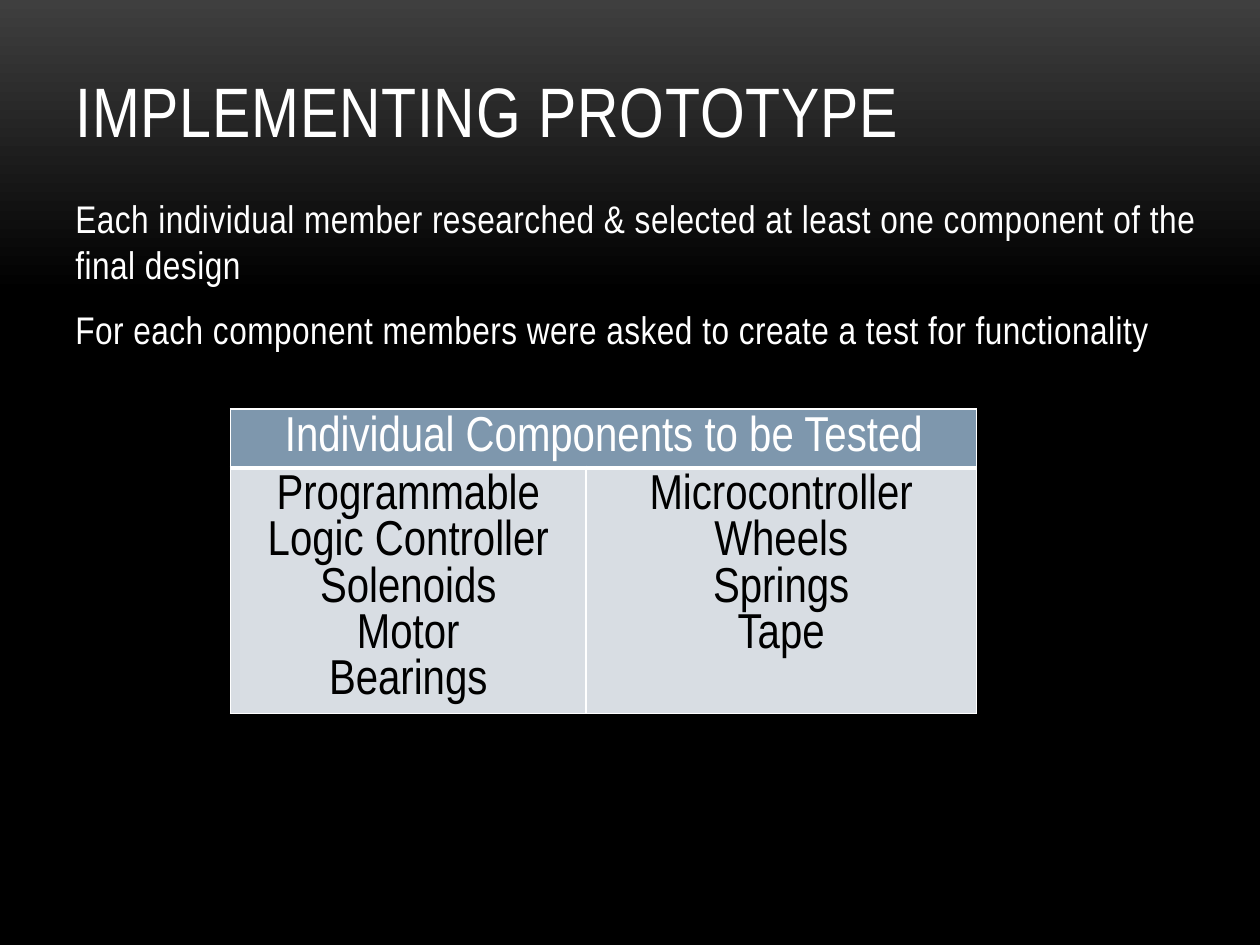
from copy import deepcopy
from dataclasses import dataclass

from pptx import Presentation
from pptx.dml.color import RGBColor
from pptx.enum.text import MSO_ANCHOR as Anchor, PP_ALIGN as Align
from pptx.oxml import parse_xml
from pptx.oxml.ns import nsdecls
from pptx.util import Inches, Pt

WIDTH, HEIGHT = Inches(10), Inches(7.5)
FONT = "Arial Narrow"
LINE_PITCH = 26.3
COLORS = {
    "glow": "3F3F3F",
    "black": "000000",
    "white": "FFFFFF",
    "header": "7E97AD",
    "body": "D8DDE3",
}


@dataclass(frozen=True)
class Box:
    """A place given as shares of the slide's width and height."""
    left: float
    top: float
    width: float
    height: float

    def lengths(self) -> tuple:
        return (int(self.left * WIDTH), int(self.top * HEIGHT),
                int(self.width * WIDTH), int(self.height * HEIGHT))


@dataclass(frozen=True)
class Style:
    size: float
    color: str = "white"
    tracking: float = 0
    align: Align = Align.LEFT
    pitch: float | None = LINE_PITCH
    before: float = 0
    after: float = 0


@dataclass(frozen=True)
class Cell:
    row: int
    column: int
    lines: tuple
    fill: str
    color: str
    bottom: float = 1


TITLE = Style(40, tracking=0.5, pitch=None)
BODY = Style(22, tracking=0.3, before=4.8, after=6)
COLUMN_SHARES = (0.282, 0.31)
ROW_SHARES = (0.06, 0.26)
CELLS = (
    Cell(0, 0, ("Individual Components to be Tested",), "header", "white", 3),
    Cell(1, 0, ("Programmable Logic Controller", "Solenoids", "Motor", "Bearings"),
         "body", "black"),
    Cell(1, 1, ("Microcontroller", "Wheels", "Springs", "Tape"), "body", "black"),
)


def rgb(name: str) -> RGBColor:
    return RGBColor.from_string(COLORS[name])


def write(text_frame, lines: tuple, style: Style) -> None:
    text_frame.text = "\n".join(lines)
    for index, paragraph in enumerate(text_frame.paragraphs):
        paragraph.alignment = style.align
        paragraph.space_before = Pt(style.before if index else 0)
        paragraph.space_after = Pt(style.after)
        if style.pitch:
            paragraph.line_spacing = Pt(style.pitch)
        for run in paragraph.runs:
            run.font.name = FONT
            run.font.size = Pt(style.size)
            run.font.bold = False
            run.font.color.rgb = rgb(style.color)
            if style.tracking:
                run.font._element.set("spc", str(int(style.tracking * 100)))


def add_text(slide, box: Box, lines: tuple, style: Style, anchor: Anchor) -> None:
    text_frame = slide.shapes.add_textbox(*box.lengths()).text_frame
    text_frame.word_wrap = True
    text_frame.vertical_anchor = anchor
    write(text_frame, lines, style)


def set_borders(cell, bottom: float) -> None:
    properties = cell._tc.get_or_add_tcPr()
    sides = {"lnL": 1, "lnR": 1, "lnT": 1, "lnB": bottom}
    for position, (side, points) in enumerate(sides.items()):
        properties.insert(position, parse_xml(
            f'<a:{side} {nsdecls("a")} w="{Pt(points)}"><a:solidFill>'
            f'<a:srgbClr val="{COLORS["white"]}"/></a:solidFill></a:{side}>'))


def add_components_table(slide, box: Box) -> None:
    table = slide.shapes.add_table(
        len(ROW_SHARES), len(COLUMN_SHARES), *box.lengths()).table
    for column, share in zip(table.columns, COLUMN_SHARES):
        column.width = int(share * WIDTH)
    for row, share in zip(table.rows, ROW_SHARES):
        row.height = int(share * HEIGHT)
    table.cell(0, 0).merge(table.cell(0, 1))
    for entry in CELLS:
        cell = table.cell(entry.row, entry.column)
        cell.fill.solid()
        cell.fill.fore_color.rgb = rgb(entry.fill)
        write(cell.text_frame, entry.lines,
              Style(28, entry.color, align=Align.CENTER))
        set_borders(cell, entry.bottom)


def paint_background(slide) -> None:
    fill = slide.background.fill
    fill.gradient()
    fill.gradient_angle = 270
    first, last = fill.gradient_stops
    first.color.rgb, first.position = rgb("glow"), 0
    last.color.rgb, last.position = rgb("black"), 1
    # A second black stop ends the fade early
    middle = deepcopy(last._gs)
    middle.set("pos", "31000")
    last._gs.addprevious(middle)


def main() -> None:
    presentation = Presentation()
    presentation.slide_width, presentation.slide_height = WIDTH, HEIGHT
    slide = presentation.slides.add_slide(presentation.slide_layouts[6])
    paint_background(slide)

    # Title and introduction
    add_text(slide, Box(0.05, 0.04, 0.9, 0.127), ("IMPLEMENTING PROTOTYPE",),
             TITLE, Anchor.BOTTOM)
    add_text(slide, Box(0.05, 0.2, 0.933, 0.167), (
        "Each individual member researched & selected at least one component"
        " of the final design",
        "For each component members were asked to create a test for functionality",
    ), BODY, Anchor.TOP)

    # Components
    add_components_table(
        slide, Box(0.183, 0.433, sum(COLUMN_SHARES), sum(ROW_SHARES)))
    presentation.save("out.pptx")


if __name__ == "__main__":
    main()
